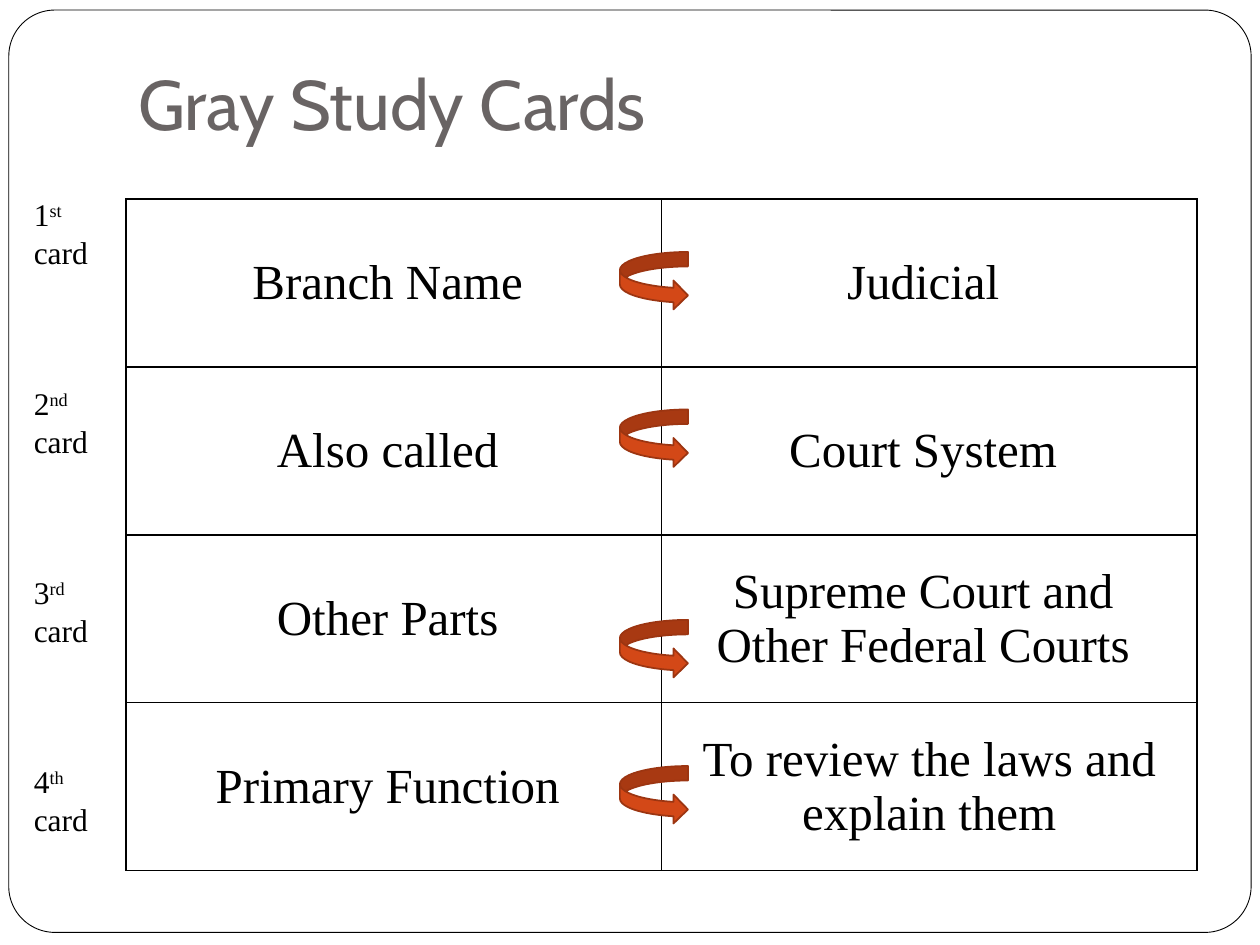
from lxml import etree
from pptx import Presentation
from pptx.dml.color import RGBColor
from pptx.enum.shapes import MSO_SHAPE
from pptx.enum.text import MSO_ANCHOR, MSO_AUTO_SIZE, PP_ALIGN
from pptx.oxml.ns import qn
from pptx.util import Inches, Pt

WHITE = RGBColor(0xFF, 0xFF, 0xFF)
BLACK = RGBColor(0, 0, 0)
GRAY = RGBColor(0x69, 0x64, 0x64)
ORANGE = RGBColor(0xD3, 0x48, 0x17)
RUST = RGBColor(0x9C, 0x35, 0x11)

ROUNDED = MSO_SHAPE.ROUNDED_RECTANGLE
CURVED_ARROW = MSO_SHAPE.CURVED_RIGHT_ARROW
MIDDLE, BOTTOM = MSO_ANCHOR.MIDDLE, MSO_ANCHOR.BOTTOM
CENTER = PP_ALIGN.CENTER
GROW = MSO_AUTO_SIZE.SHAPE_TO_FIT_TEXT

TITLE_FONT = {"name": "Cabin", "size": Pt(40)}
CELL_FONT = {"name": "Times New Roman", "size": Pt(28)}
LABEL_FONT = {"name": "Times New Roman", "size": Pt(18)}
LABEL_LINE = 21.6

# Each entry: left cell, right cell paragraphs, top of the arrow in inches
CARDS = [
    ("Branch Name ", ["Judicial "], 2),
    ("Also called ", ["Court System "], 3.25),
    ("Other Parts ", ["Supreme Court and ", "Other Federal Courts "], 4.92),
    ("Primary Function ", ["To review the laws and explain them"], 6.08),
]
ORDINALS = ["st", "nd", "rd", "th"]


def inches(*box):
    return [Inches(v) for v in box]


def add_run(p, text, font, color=BLACK):
    r = p.add_run()
    r.text = text
    for name, value in font.items():
        setattr(r.font, name, value)
    r.font.color.rgb = color
    return r


def add_shape(slide, kind, box, fill, line, width):
    s = slide.shapes.add_shape(kind, *inches(*box))
    s.shadow.inherit = False
    s.fill.solid()
    s.fill.fore_color.rgb = fill
    s.line.color.rgb = line
    s.line.width = Pt(width)
    return s


def add_frame(slide, box):
    s = add_shape(slide, ROUNDED, box, WHITE, BLACK, 0.5)
    s.adjustments[0] = 0.05


def add_title(slide, box, text):
    tf = slide.shapes.add_textbox(*inches(*box)).text_frame
    tf.word_wrap = True
    tf.vertical_anchor = BOTTOM
    tf.margin_bottom = Inches(0.1)
    add_run(tf.paragraphs[0], text, TITLE_FONT, GRAY)


def set_borders(cell):
    tc_pr = cell._tc.get_or_add_tcPr()
    for i, side in enumerate(("a:lnL", "a:lnR", "a:lnT", "a:lnB")):
        ln = etree.Element(qn(side), w=str(Pt(1)))
        fill = etree.SubElement(ln, qn("a:solidFill"))
        etree.SubElement(fill, qn("a:srgbClr"), val=str(BLACK))
        tc_pr.insert(i, ln)


def fill_cell(cell, lines):
    cell.fill.background()
    cell.vertical_anchor = MIDDLE
    set_borders(cell)
    tf = cell.text_frame
    for i, line in enumerate(lines):
        p = tf.add_paragraph() if i else tf.paragraphs[0]
        p.alignment = CENTER
        add_run(p, line, CELL_FONT)


def add_card_table(slide, box):
    table = slide.shapes.add_table(len(CARDS), 2, *inches(*box)).table
    table.first_row = table.horz_banding = False
    for row, (term, answer, _) in enumerate(CARDS):
        fill_cell(table.cell(row, 0), [term])
        fill_cell(table.cell(row, 1), answer)


def add_arrows(slide, left, width, height):
    for _, _, top in CARDS:
        add_shape(slide, CURVED_ARROW, (left, top, width, height), ORANGE, RUST, 1)


def add_card_labels(slide, box):
    """Number the cards in one text column, three lines apart."""
    tf = slide.shapes.add_textbox(*inches(*box)).text_frame
    tf.word_wrap = True
    tf.auto_size = GROW
    for i, ordinal in enumerate(ORDINALS):
        p = tf.add_paragraph() if i else tf.paragraphs[0]
        p.line_spacing = Pt(LABEL_LINE)
        p.space_before = Pt(3 * LABEL_LINE if i else 0)
        add_run(p, str(i + 1), LABEL_FONT)
        r = add_run(p, ordinal, LABEL_FONT)
        r.font._element.set("baseline", "30000")
        add_run(p, " card", LABEL_FONT)


def main():
    prs = Presentation()
    prs.slide_width, prs.slide_height = inches(10, 7.5)
    slide = prs.slides.add_slide(prs.slide_layouts[6])
    add_frame(slide, (0.07, 0.08, 9.86, 7.32))
    add_title(slide, (1, 0.3, 8.5, 0.95), "Gray Study Cards")
    add_card_table(slide, (1, 1.58, 8.5, 5.33))
    add_arrows(slide, 4.92, 0.54, 0.46)
    add_card_labels(slide, (0.17, 1.5, 0.67, 5.25))
    prs.save("out.pptx")


if __name__ == "__main__":
    main()
